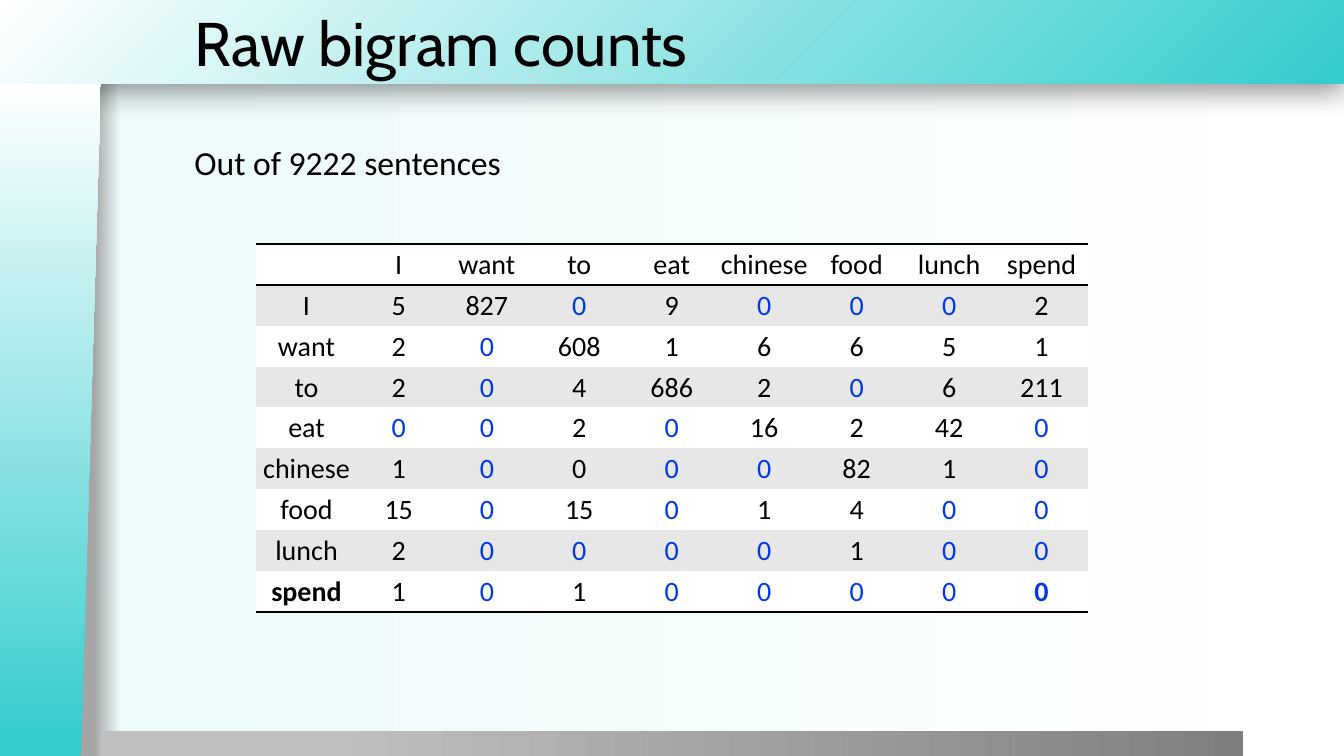
from lxml import etree
from pptx import Presentation
from pptx.dml.color import RGBColor
from pptx.enum.shapes import MSO_SHAPE
from pptx.enum.text import MSO_ANCHOR, PP_ALIGN
from pptx.oxml.ns import qn
from pptx.util import Inches, Pt

RECT = MSO_SHAPE.RECTANGLE
SLANTED = MSO_SHAPE.FLOWCHART_MANUAL_INPUT
MIDDLE = MSO_ANCHOR.MIDDLE
TOP = MSO_ANCHOR.TOP
LEFT = PP_ALIGN.LEFT
CENTER = PP_ALIGN.CENTER
TEAL, WHITE, BLACK, BLUE, GRAY = "34CCCC", "FFFFFF", "000000", "0039E5", "E7E7E7"
NO_STYLE = "{2D5ABB26-0587-4C30-8999-92F81FD0307C}"

WORDS = ["I", "want", "to", "eat", "chinese", "food", "lunch", "spend"]
COUNTS = [
    [5, 827, 0, 9, 0, 0, 0, 2],
    [2, 0, 608, 1, 6, 6, 5, 1],
    [2, 0, 4, 686, 2, 0, 6, 211],
    [0, 0, 2, 0, 16, 2, 42, 0],
    [1, 0, 0, 0, 0, 82, 1, 0],
    [15, 0, 15, 0, 1, 4, 0, 0],
    [2, 0, 0, 0, 0, 1, 0, 0],
    [1, 0, 1, 0, 0, 0, 0, 0],
]
BLACK_ZERO = (5, 3)
BOLD_CELLS = {(8, 0), (8, 8)}


def color(value):
    return RGBColor.from_string(value)


def add_node(parent, tag, **attrs):
    return etree.SubElement(parent, qn(tag), {k: str(v) for k, v in attrs.items()})


def set_gradient(fill, owner, stops, corner=False):
    fill.gradient()
    grad = owner.find(".//" + qn("a:gradFill"))
    for child in list(grad):
        grad.remove(child)
    grad.set("rotWithShape", "1")
    gs_list = add_node(grad, "a:gsLst")
    for position, value in stops:
        gs = add_node(gs_list, "a:gs", pos=position * 1000)
        add_node(gs, "a:srgbClr", val=value)
    if corner:
        circle = add_node(grad, "a:path", path="circle")
        add_node(circle, "a:fillToRect", l=100000, t=100000)
    else:
        add_node(grad, "a:lin", ang=0, scaled=0)


def add_band(s, preset, box, stops, corner=False):
    sp = s.shapes.add_shape(preset, *map(Inches, box))
    sp.shadow.inherit = False
    sp.line.fill.background()
    set_gradient(sp.fill, sp.element, stops, corner)
    return sp


def add_backdrop(s, width, height):
    set_gradient(s.background.fill, s.element,
                 [(0, "A6A6A6"), (7, "A6A6A6"), (9, "EDFBFB"), (100, WHITE)])
    header = add_band(s, RECT, (-0.01, 0, width + 0.01, 0.83),
                      [(0, TEAL), (100, WHITE)], corner=True)
    effects = header.element.spPr.find(qn("a:effectLst"))
    shadow = add_node(effects, "a:outerShdw", blurRad=Pt(20), dist=Pt(6),
                      dir=5400000, algn="t", rotWithShape=0)
    add_node(add_node(shadow, "a:srgbClr", val=BLACK), "a:alpha", val=40000)
    add_band(s, RECT, (1, height - 0.25, width - 2, 0.26),
             [(20, "BFBFBF"), (100, "7F7F7F")])
    side = add_band(s, SLANTED, (-2.84, 3.67, 6.68, 1), [(1, TEAL), (100, WHITE)])
    side.rotation = 270
    side.element.spPr.find(qn("a:xfrm")).set("flipV", "1")


def write_text(sp, box, text, font, size, anchor):
    sp.left, sp.top, sp.width, sp.height = map(Inches, box)
    tf = sp.text_frame
    tf.word_wrap = True
    tf.vertical_anchor = anchor
    tf.text = text
    format_text(tf.paragraphs[0], font, size, BLACK, LEFT)


def format_text(p, font, size, value, align, bold=False):
    p.alignment = align
    for r in p.runs:
        r.font.name = font
        r.font.size = Pt(size)
        r.font.bold = bold
        r.font.color.rgb = color(value)


def add_title(s, box, text):
    title = s.shapes.title
    s.shapes.element.append(title.element)
    write_text(title, box, text, "Cabin", 44, MIDDLE)


def add_body(s, box, text):
    sp = s.shapes.add_textbox(*map(Inches, box))
    write_text(sp, box, text, "Calibri", 24, TOP)


def add_border(cell, tag):
    ln = etree.Element(qn(tag), {"w": str(Pt(2))})
    add_node(add_node(ln, "a:solidFill"), "a:srgbClr", val=BLACK)
    cell._tc.get_or_add_tcPr().insert(0, ln)


def format_cell(cell, row, col, text):
    cell.margin_left = cell.margin_right = cell.margin_top = Inches(0.01)
    cell.margin_bottom = 0
    cell.vertical_anchor = MIDDLE
    cell.fill.solid()
    cell.fill.fore_color.rgb = color(GRAY if row % 2 else WHITE)
    cell.text_frame.text = text
    is_blue = text == "0" and (row, col) != BLACK_ZERO
    format_text(cell.text_frame.paragraphs[0], "Calibri", 20,
                BLUE if is_blue else BLACK, CENTER, (row, col) in BOLD_CELLS)
    if row in (0, len(WORDS)):
        add_border(cell, "a:lnB")
    if row == 0:
        add_border(cell, "a:lnT")


def add_counts_table(s, box):
    rows = [[""] + WORDS]
    rows += [[word] + [str(n) for n in line] for word, line in zip(WORDS, COUNTS)]
    size = len(rows)
    table = s.shapes.add_table(size, size, *map(Inches, box)).table
    table.first_row = table.horz_banding = False
    table._tbl.tblPr.find(qn("a:tableStyleId")).text = NO_STYLE
    widths = [1, 0.83] + [(box[2] - 1.83) / (size - 2)] * (size - 2)
    for column, width in zip(table.columns, widths):
        column.width = Inches(width)
    for i, line in enumerate(rows):
        table.rows[i].height = Inches(box[3] / size)
        for j, text in enumerate(line):
            format_cell(table.cell(i, j), i, j, text)


def main():
    width, height = 13.33, 7.5
    prs = Presentation()
    prs.slide_width, prs.slide_height = Inches(width), Inches(height)
    s = prs.slides.add_slide(prs.slide_layouts[5])
    add_backdrop(s, width, height)
    add_title(s, (1.83, 0, 11.5, 0.83), "Raw bigram counts")
    add_body(s, (1.83, 1.36, 10.5, 5.79), "Out of 9222 sentences")
    add_counts_table(s, (2.54, 2.42, 8.25, 3.65))
    prs.save("out.pptx")


if __name__ == "__main__":
    main()
